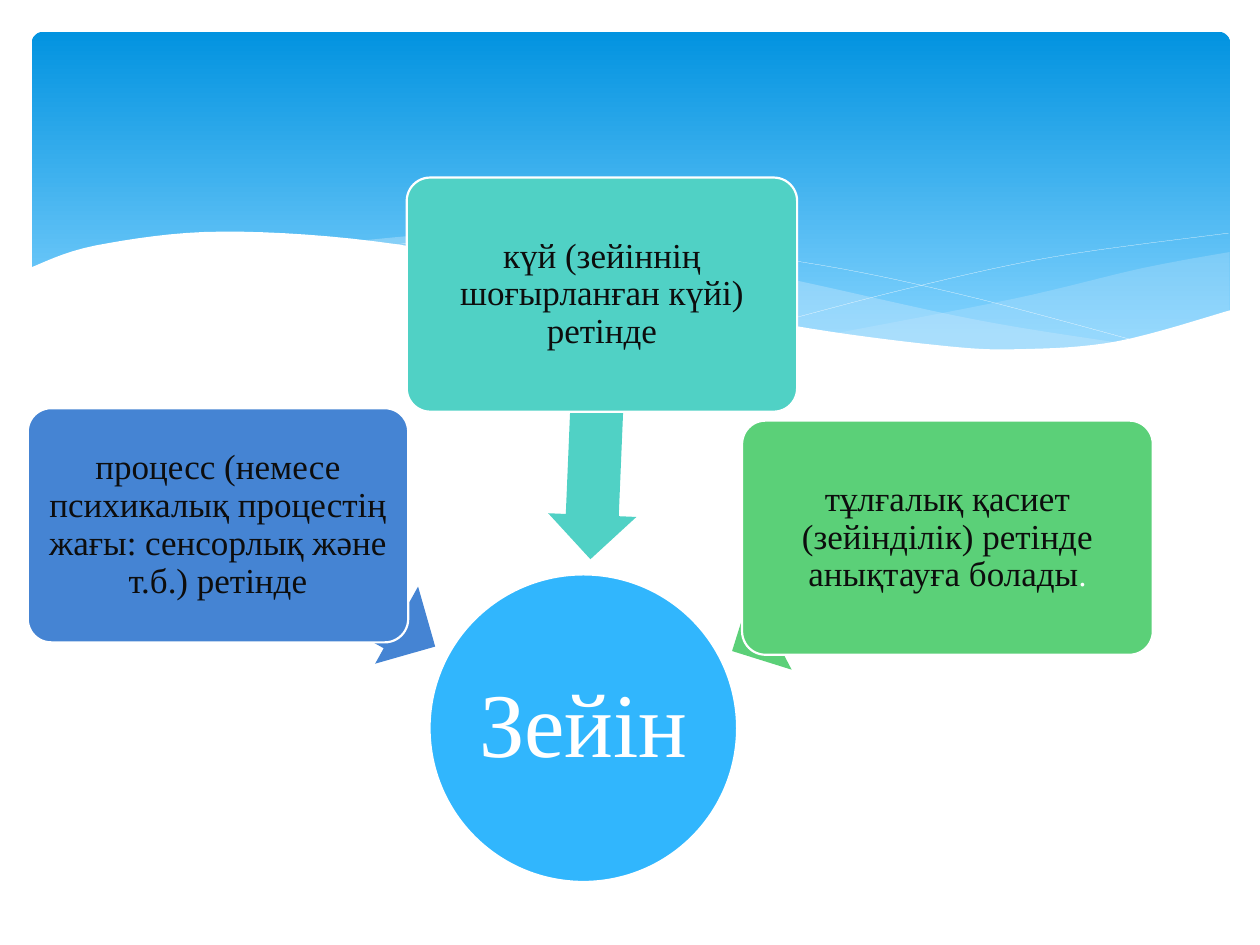
"""Builds a slide on the three ways of defining attention, under a wave banner."""
from lxml import etree
from pptx import Presentation
from pptx.dml.color import RGBColor
from pptx.enum.shapes import MSO_SHAPE as Preset
from pptx.enum.text import MSO_ANCHOR as Anchor, PP_ALIGN as Align
from pptx.oxml.ns import qn
from pptx.util import Cm, Pt

WHITE, INK, MIST = "FFFFFF", "0D0D0D", "C6E7FC"
CARD_HEIGHT, ARROW_HEIGHT = Cm(4.72), Cm(1.78)
HAIRLINE, CARD_BORDER = 0.1, 1.25
STEPS = 8


def paint(part, fill=None, line=None, width=CARD_BORDER, alpha=100):
    part.shadow.inherit = False
    if fill:
        part.fill.solid()
        part.fill.fore_color.rgb = RGBColor.from_string(fill)
        if alpha < 100:
            tint = part.fill._xPr.find(qn("a:solidFill"))[0]
            etree.SubElement(tint, qn("a:alpha")).set("val", str(alpha * 1000))
    else:
        part.fill.background()
    if line:
        part.line.color.rgb = RGBColor.from_string(line)
        part.line.width = Pt(width)
    else:
        part.line.fill.background()


def smooth_curve(knots):
    """Return points on a Catmull-Rom curve that passes through the knots."""
    padded = [knots[0], *knots, knots[-1]]
    points = [tuple(map(Cm, knots[0]))]
    for before, start, end, after in zip(padded, padded[1:], padded[2:], padded[3:]):
        for step in range(1, STEPS + 1):
            t = step / STEPS
            points.append(tuple(
                Cm(b + (c - a) * t / 2 + (2 * a - 5 * b + 4 * c - d) * t ** 2 / 2
                   + (3 * b - a - 3 * c + d) * t ** 3 / 2)
                for a, b, c, d in zip(before, start, end, after)))
    return points


deck = Presentation()
deck.slide_width, deck.slide_height = Cm(25.4), Cm(19.05)
slide = deck.slides.add_slide(deck.slide_layouts[6])
shapes = slide.shapes

banner = shapes.add_shape(Preset.ROUNDED_RECTANGLE, Cm(0.64), Cm(0.64), Cm(24.16), Cm(6.86))
banner.adjustments[0] = 0.034
paint(banner)
banner.fill.gradient()
banner.fill.gradient_angle = 270
for stop, color, position in zip(banner.fill.gradient_stops, ("0293E0", "83D3FE"), (0, 0.9)):
    stop.color.rgb = RGBColor.from_string(color)
    stop.position = position

right_swell = [
    [(24.79, 5.08), (23.01, 5.41), (20.45, 6.02), (16.79, 6.73)],
    [(16.79, 6.73), (18.92, 6.99), (20.68, 7.06), (22.58, 6.91), (24.79, 6.27)]]
middle_swell = [
    [(22.68, 6.93), (19.69, 6.45), (15.98, 5.64), (12.75, 4.98), (9.65, 4.7), (7.26, 4.85)],
    [(7.26, 4.85), (11.4, 5.64), (15.27, 6.48), (18.34, 6.96), (20.78, 7.06), (22.68, 6.93)]]
falling_line = [
    [(7.85, 4.95), (9.83, 4.75), (12.42, 4.83), (16.15, 5.28), (19.3, 5.92), (23.04, 6.91)]]
rising_line = [[(15.57, 6.53), (18.29, 5.82), (21.23, 5.18), (24.77, 4.7)]]
white_wave = [
    [(0.58, 5.41), (1.93, 4.95), (4.5, 4.67), (8.03, 4.93), (12.07, 5.77),
     (15.9, 6.55), (18.9, 6.96), (20.55, 7.04), (22.53, 6.88), (24.82, 6.25)],
    [(24.82, 8.36), (0.58, 8.36)]]

for edges, fill, line, alpha in (
        (right_swell, MIST, None, 29),
        (middle_swell, MIST, None, 40),
        (falling_line, None, WHITE, 100),
        (rising_line, None, WHITE, 100),
        (white_wave, WHITE, None, 100)):
    start, *rest = [point for knots in edges for point in smooth_curve(knots)]
    outline = shapes.build_freeform(*start)
    outline.add_line_segments(rest, close=fill is not None)
    paint(outline.convert_to_shape(), fill, line, HAIRLINE, alpha)

attention = shapes.add_shape(Preset.OVAL, Cm(8.66), Cm(11.58), Cm(6.2), Cm(6.2))
paint(attention, "31B6FD", WHITE)
labels = [(attention, "Зейін", 52, WHITE)]

definitions = (
    ("процесс (немесе психикалық процестің жағы: сенсорлық және т.б.) ретінде",
     "4584D3", (0.56, 8.23, 7.67), (4.06, 10.92, 5.03), 209.1),
    ("күй (зейіннің шоғырланған күйі) ретінде",
     "50D1C5", (8.2, 3.58, 7.87), (9.35, 7.72, 5.33), 272.4),
    ("тұлғалық қасиет (зейінділік) ретінде анықтауға болады",
     "5BD078", (14.96, 8.48, 8.28), (14.48, 11.1, 4.9), 332.4))
for wording, color, card_place, arrow_place, angle in definitions:
    arrow = shapes.add_shape(Preset.LEFT_ARROW, *map(Cm, arrow_place), ARROW_HEIGHT)
    arrow.adjustments[0] = 0.6
    arrow.rotation = angle
    paint(arrow, color)
    card = shapes.add_shape(Preset.ROUNDED_RECTANGLE, *map(Cm, card_place), CARD_HEIGHT)
    card.adjustments[0] = 0.1
    paint(card, color, WHITE)
    labels.append((card, wording, 20, INK))

for part, wording, size, color in labels:
    frame = part.text_frame
    frame.word_wrap = part is not attention
    frame.vertical_anchor = Anchor.MIDDLE
    frame.margin_left = frame.margin_right = Cm(0.1)
    frame.margin_top = frame.margin_bottom = Cm(0.1)
    sentence = frame.paragraphs[0]
    sentence.alignment = Align.CENTER
    sentence.line_spacing = 0.9
    sentence.font.name = "Times New Roman"
    sentence.font.size = Pt(size)
    sentence.font.color.rgb = RGBColor.from_string(color)
    sentence.add_run().text = wording

full_stop = sentence.add_run()
full_stop.text = "."
full_stop.font.size = Pt(18)
full_stop.font.color.rgb = RGBColor.from_string(WHITE)

deck.save("out.pptx")
